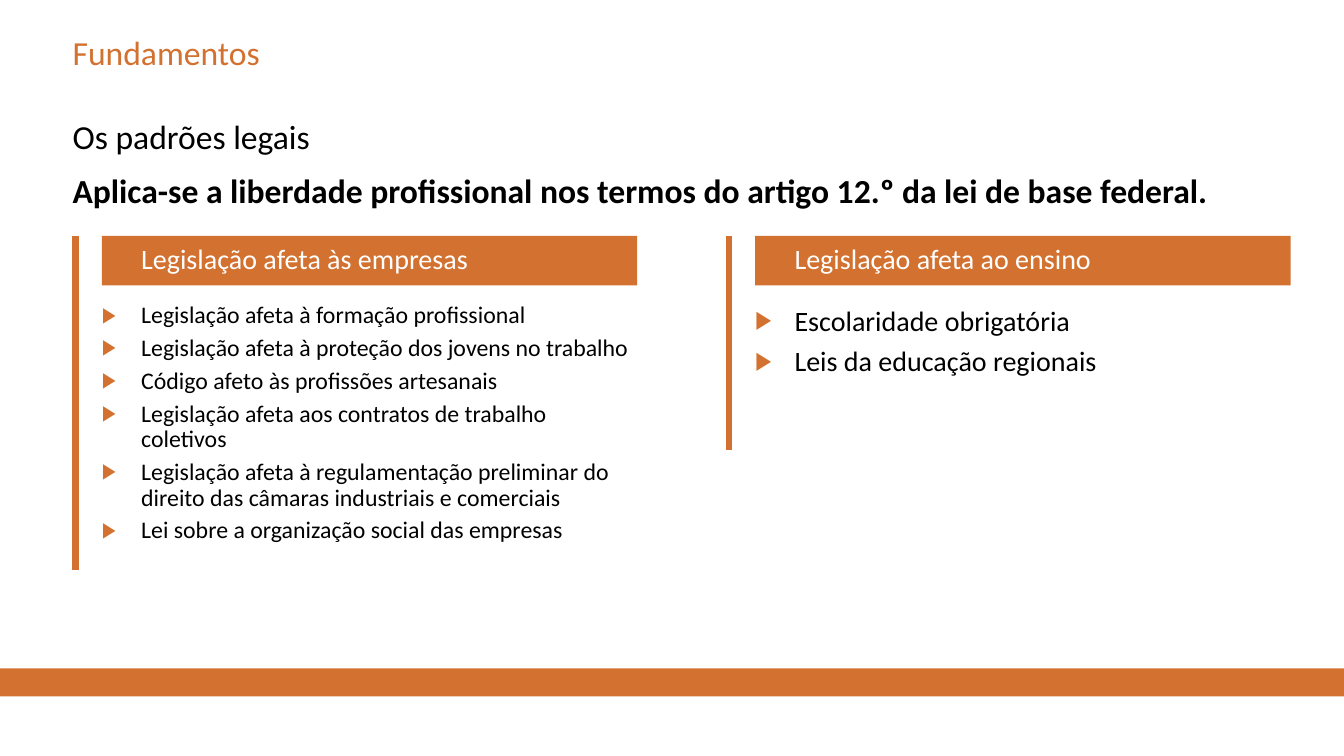
import pptx
import pptx.dml.color
import pptx.enum.shapes
import pptx.enum.text
import pptx.oxml.ns
import pptx.util
from lxml import etree

ORANGE, BLACK, WHITE = "D37230", "000000", "FFFFFF"
FONT = "Calibri"
WIDTH, HEIGHT = 13.33, 7.5
MARGIN = 0.72
INDENT = 0.39
RULE_GAP = 0.26  # from the vertical rule to the column content
HEADER_HEIGHT = 0.49
LIST_OFFSET, LIST_HEIGHT = 0.67, 2.86
COLUMN_TOP, COLUMN_WIDTH = 2.34, 5.57

COLUMNS = [
    {
        "left": 0.75, "rule_height": 3.31, "size": 17, "line_spacing": 0.9,
        "heading": "Legislação afeta às empresas",
        "items": [
            "Legislação afeta à formação profissional",
            "Legislação afeta à proteção dos jovens no trabalho",
            "Código afeto às profissões artesanais",
            "Legislação afeta aos contratos de trabalho coletivos",
            "Legislação afeta à regulamentação preliminar do direito das câmaras industriais e comerciais",
            "Lei sobre a organização social das empresas",
        ],
    },
    {
        "left": 7.23, "rule_height": 2.12, "size": 20, "line_spacing": 1.0,
        "heading": "Legislação afeta ao ensino",
        "items": ["Escolaridade obrigatória", "Leis da educação regionais"],
    },
]


def color(value):
    return pptx.dml.color.RGBColor.from_string(value)


def inches(*lengths):
    return [pptx.util.Inches(length) for length in lengths]


def set_frame(shape, left_inset=0, anchor="TOP"):
    frame = shape.text_frame
    settings = {
        "margin_left": pptx.util.Inches(left_inset),
        "margin_right": 0, "margin_top": 0, "margin_bottom": 0,
        "word_wrap": True,
        "auto_size": pptx.enum.text.MSO_AUTO_SIZE.NONE,
        "vertical_anchor": pptx.enum.text.MSO_ANCHOR[anchor],
    }
    for name, value in settings.items():
        setattr(frame, name, value)
    return frame


def add_bullet(paragraph):
    properties = paragraph._p.get_or_add_pPr()
    properties.set("marL", str(pptx.util.Inches(INDENT)))
    properties.set("indent", str(-pptx.util.Inches(INDENT)))
    qualified = pptx.oxml.ns.qn
    bullet_color = etree.SubElement(properties, qualified("a:buClr"))
    etree.SubElement(bullet_color, qualified("a:srgbClr"), val=ORANGE)
    etree.SubElement(properties, qualified("a:buSzPct"), val="90000")
    etree.SubElement(properties, qualified("a:buFont"), typeface="Arial")
    etree.SubElement(properties, qualified("a:buChar"), char="▶")


def write_paragraphs(frame, texts, size, text_color, space=0, line_spacing=1.0, bullets=False):
    for index, text in enumerate(texts):
        paragraph = frame.add_paragraph() if index else frame.paragraphs[0]
        paragraph.text = text
        paragraph.alignment = pptx.enum.text.PP_ALIGN.LEFT
        paragraph.line_spacing = line_spacing
        if index:
            paragraph.space_before = pptx.util.Pt(space)
        if bullets:
            add_bullet(paragraph)
        settings = {"name": FONT, "size": pptx.util.Pt(size)}
        for name, value in settings.items():
            setattr(paragraph.font, name, value)
        paragraph.font.color.rgb = color(text_color)


def add_bar(slide, left, top, width, height):
    bar = slide.shapes.add_shape(
        pptx.enum.shapes.MSO_SHAPE.RECTANGLE, *inches(left, top, width, height))
    bar.shadow.inherit = False
    bar.fill.solid()
    bar.fill.fore_color.rgb = color(ORANGE)
    bar.line.fill.background()
    return bar


def add_rule(slide, left, top, height):
    rule = slide.shapes.add_connector(
        pptx.enum.shapes.MSO_CONNECTOR.STRAIGHT, *inches(left, top, left, top + height))
    rule.line.color.rgb = color(ORANGE)
    rule.line.width = pptx.util.Pt(4.5)
    etree.SubElement(rule._element.spPr, pptx.oxml.ns.qn("a:effectLst"))


def place_title(slide, left, top, width, height):
    title = slide.shapes.title
    title.left, title.top, title.width, title.height = inches(left, top, width, height)
    write_paragraphs(set_frame(title), ["Fundamentos"], 24, ORANGE)


def add_introduction(slide, left, top, width, height):
    box = slide.shapes.add_textbox(*inches(left, top, width, height))
    frame = set_frame(box)
    write_paragraphs(frame, [
        "Os padrões legais",
        "Aplica-se a liberdade profissional nos termos do artigo 12.º da lei de base federal.",
    ], 24, BLACK, space=10)
    frame.paragraphs[1].font.bold = True


def add_column(slide, column, left, top, width):
    content_left, content_width = left + RULE_GAP, width - RULE_GAP

    # Heading band
    header = add_bar(slide, content_left, top, content_width, HEADER_HEIGHT)
    write_paragraphs(set_frame(header, INDENT, "MIDDLE"), [column["heading"]],
                     20, WHITE, line_spacing=0.9)

    # Bulleted list
    box = slide.shapes.add_textbox(
        *inches(content_left, top + LIST_OFFSET, content_width, LIST_HEIGHT))
    write_paragraphs(set_frame(box), column["items"], column["size"], BLACK, space=5,
                     line_spacing=column["line_spacing"], bullets=True)

    # Vertical rule
    add_rule(slide, left, top, column["rule_height"])


def main():
    presentation = pptx.Presentation()
    presentation.slide_width, presentation.slide_height = inches(WIDTH, HEIGHT)
    slide = presentation.slides.add_slide(presentation.slide_layouts[5])

    add_bar(slide, 0, 6.63, WIDTH, 0.28)
    place_title(slide, MARGIN, 0.32, 9.84, 0.49)
    add_introduction(slide, MARGIN, 1.15, 12.09, 1.1)
    for column in COLUMNS:
        add_column(slide, column, column["left"], COLUMN_TOP, COLUMN_WIDTH)

    presentation.save("out.pptx")


if __name__ == "__main__":
    main()
